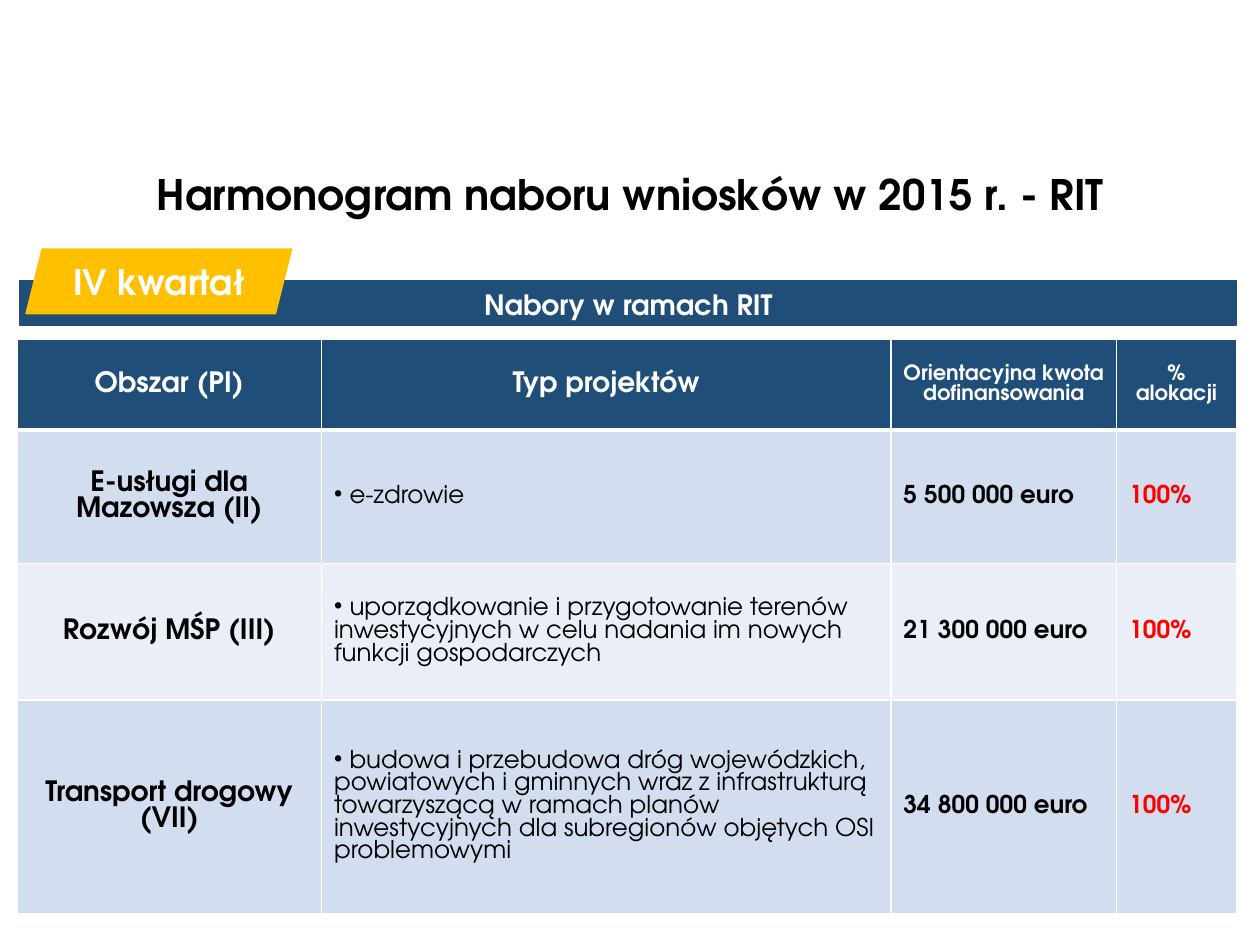
import pptx
import pptx.dml.color
import pptx.enum.shapes
import pptx.enum.text
import pptx.oxml
import pptx.oxml.ns
import pptx.util

Pt = pptx.util.Pt
Rgb = pptx.dml.color.RGBColor.from_string
Kind = pptx.enum.shapes.MSO_SHAPE
Align = pptx.enum.text.PP_ALIGN
Anchor = pptx.enum.text.MSO_ANCHOR
theme = {
    "font": "TeX Gyre Adventor",
    "navy": "1F4E79", "gold": "FFC000", "white": "FFFFFF",
    "black": "000000", "red": "FF0000", "bands": ["D2DEEF", "EAEFF7"],
    "title": 24, "badge": 20, "head": 16, "body": 14, "small": 12,
}


def write(frame, text, size, color, bold=True, align=Align.CENTER, bullet=False):
    para = frame.paragraphs[0]
    para.alignment = align
    if bullet:
        props = para._p.get_or_add_pPr()
        props.set("marL", "0")
        props.set("indent", "0")
        mark = pptx.oxml.parse_xml(f'<a:buChar {pptx.oxml.ns.nsdecls("a")} char="•"/>')
        props.append(mark)
    run = para.add_run()
    run.text = text
    style = {"name": theme["font"], "size": Pt(theme[size]), "bold": bold}
    for key, value in style.items():
        setattr(run.font, key, value)
    run.font.color.rgb = Rgb(theme[color])
    return para


def edge(cell, side, width):
    line = pptx.oxml.parse_xml(
        f'<a:{side} {pptx.oxml.ns.nsdecls("a")} w="{Pt(width)}">'
        f'<a:solidFill><a:srgbClr val="{theme["white"]}"/></a:solidFill></a:{side}>')
    cell._tc.get_or_add_tcPr().append(line)


deck = pptx.Presentation()
deck.slide_width, deck.slide_height = Pt(720), Pt(540)
slide = deck.slides.add_slide(deck.slide_layouts[6])

title = slide.shapes.add_textbox(Pt(49.7), Pt(75.6), Pt(620.6), Pt(73.4)).text_frame
for key, value in {"word_wrap": True, "vertical_anchor": Anchor.MIDDLE}.items():
    setattr(title, key, value)
write(title, "Harmonogram naboru wniosków w 2015 r. - RIT", "title", "black").line_spacing = 0.9

heads = [("Obszar (PI)", "head"), ("Typ projektów", "head"),
         ("Orientacyjna kwota dofinansowania", "small"), ("% alokacji", "small")]
calls = [
    ("E-usługi dla Mazowsza (II)", " e-zdrowie", "5 500 000 euro", "100%"),
    ("Rozwój MŚP (III)",
     " uporządkowanie i przygotowanie terenów inwestycyjnych w celu nadania im "
     "nowych funkcji gospodarczych", "21 300 000 euro", "100%"),
    ("Transport drogowy (VII)",
     " budowa i przebudowa dróg wojewódzkich, powiatowych i gminnych wraz z "
     "infrastrukturą towarzyszącą w ramach planów inwestycyjnych dla subregionów "
     "objętych OSI problemowymi", "34 800 000 euro", "100%"),
]
looks = [
    {"size": "head", "color": "black"},
    {"size": "body", "color": "black", "bold": False, "align": Align.LEFT, "bullet": True},
    {"size": "body", "color": "black", "align": Align.LEFT},
    {"size": "body", "color": "red", "align": Align.LEFT},
]
widths = [174, 325.4, 129, 68.4]
heights = [51.8, 76.2, 78, 122.2]
table = slide.shapes.add_table(4, 4, Pt(9.7), Pt(194), Pt(sum(widths)), Pt(sum(heights))).table
for col, width in zip(table.columns, widths):
    col.width = Pt(width)
for row, height in zip(table.rows, heights):
    row.height = Pt(height)

for r in range(4):
    for c in range(4):
        cell = table.cell(r, c)
        cell.vertical_anchor = Anchor.MIDDLE
        sides = {"lnL": 1, "lnR": 1, "lnT": 3 if r == 1 else 1, "lnB": 3 if r == 0 else 1}
        for side, width in sides.items():
            edge(cell, side, width)
        cell.fill.solid()
        if r == 0:
            cell.fill.fore_color.rgb = Rgb(theme["navy"])
            write(cell.text_frame, *heads[c], "white")
        else:
            cell.fill.fore_color.rgb = Rgb(theme["bands"][(r - 1) % 2])
            write(cell.text_frame, calls[r - 1][c], **looks[c])

labels = [
    (Kind.RECTANGLE, (11.3, 160.5, 695.5, 25.2), "navy", 0.75, Anchor.TOP,
     "Nabory w ramach RIT", "head"),
    (Kind.PARALLELOGRAM, (15, 142.4, 151.5, 36.7), "gold", 1, Anchor.MIDDLE,
     "IV kwartał", "badge"),
]
for kind, box, color, width, anchor, text, size in labels:
    shape = slide.shapes.add_shape(kind, *map(Pt, box))
    shape.shadow.inherit = False
    shape.fill.solid()
    shape.fill.fore_color.rgb = shape.line.color.rgb = Rgb(theme[color])
    shape.line.width = Pt(width)
    for key, value in {"word_wrap": True, "vertical_anchor": anchor}.items():
        setattr(shape.text_frame, key, value)
    write(shape.text_frame, text, size, "white")

deck.save("out.pptx")
